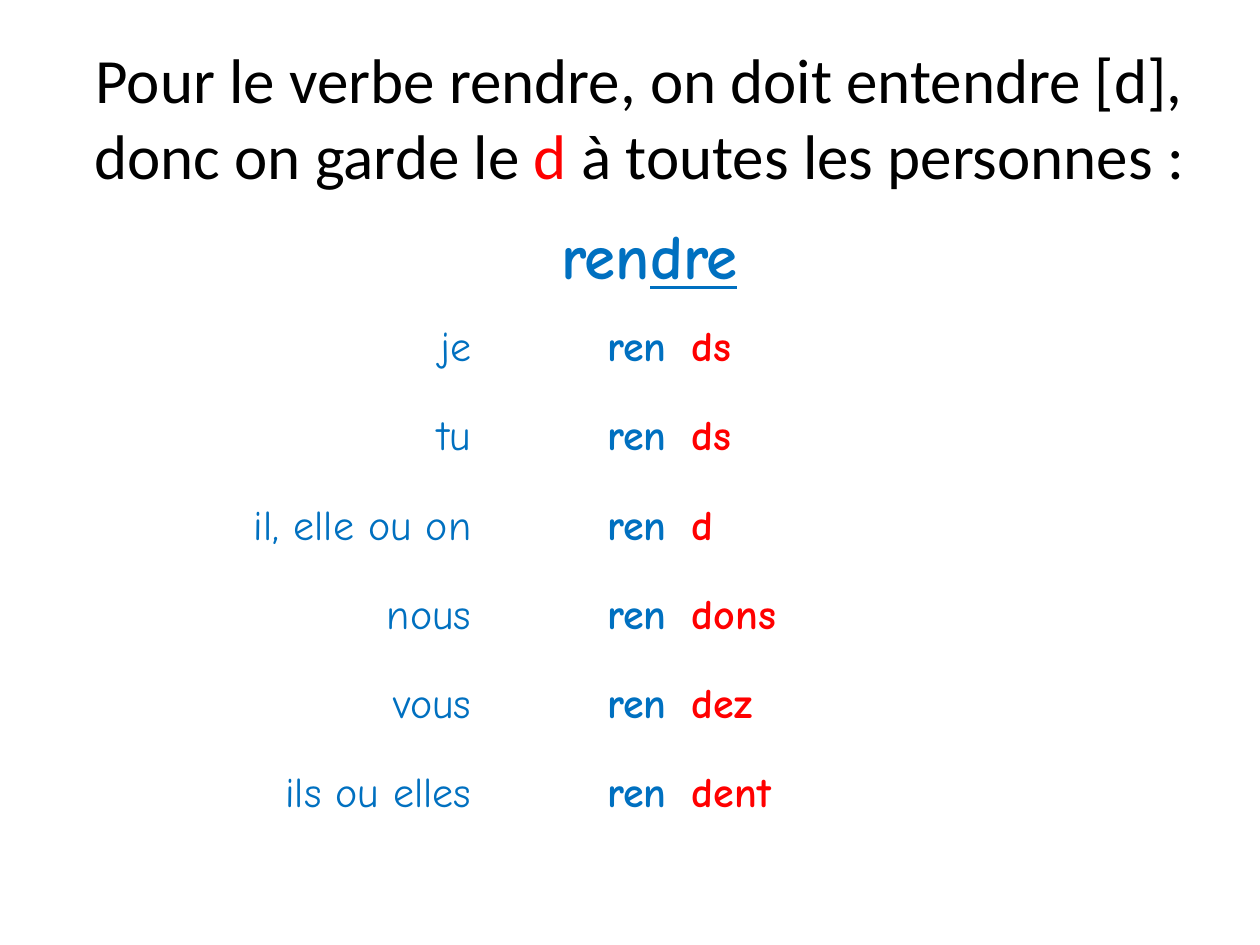
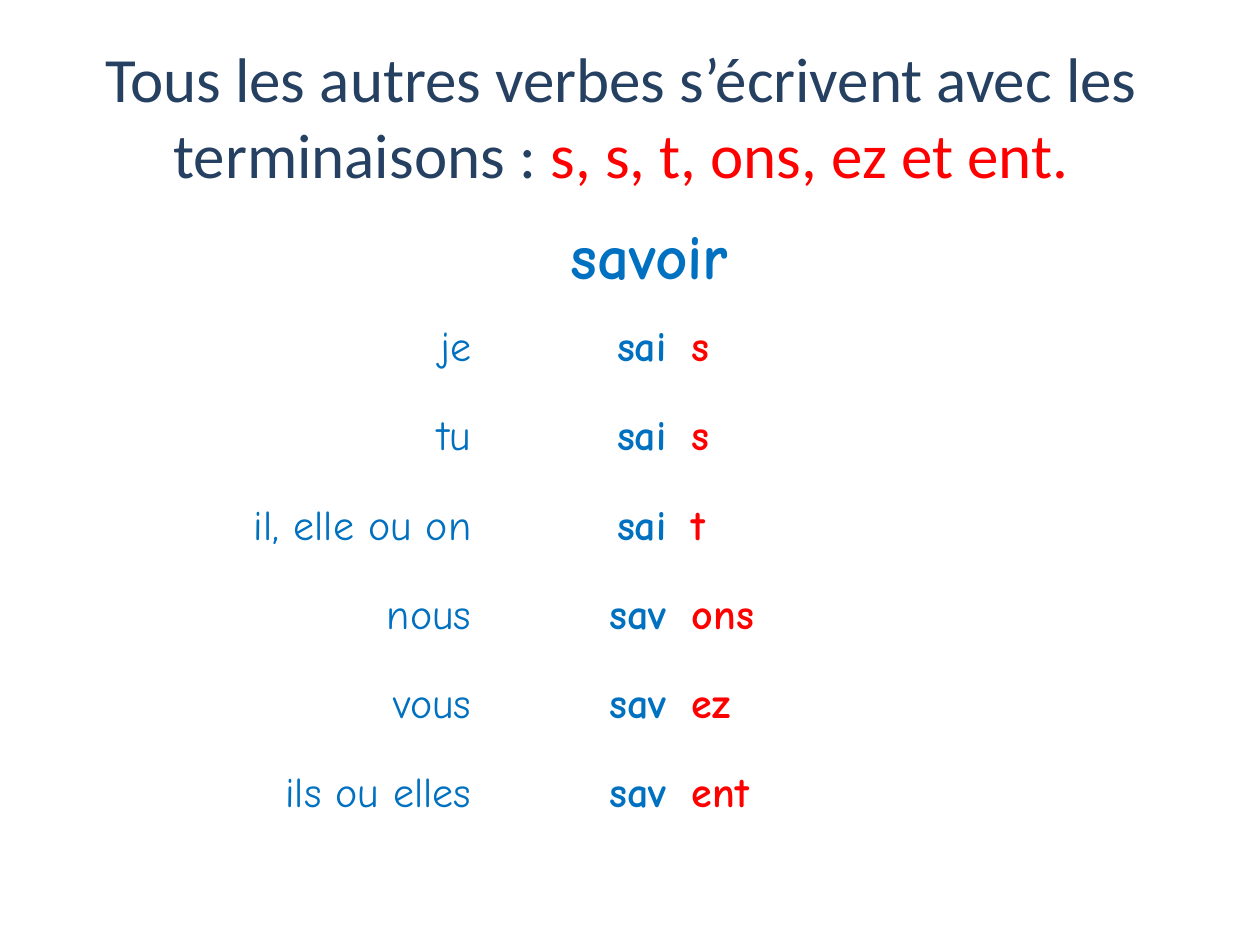
"""Build two slides on the endings of French verbs in the present tense."""
from dataclasses import dataclass

from pptx import Presentation
from pptx.dml.color import RGBColor
from pptx.enum.text import MSO_ANCHOR, PP_ALIGN
from pptx.slide import Slide
from pptx.text.text import TextFrame
from pptx.util import Pt

LEFT, CENTER, RIGHT = PP_ALIGN.LEFT, PP_ALIGN.CENTER, PP_ALIGN.RIGHT
MIDDLE = MSO_ANCHOR.MIDDLE


@dataclass(frozen=True)
class Theme:
    """Colours, fonts and type sizes shared by the slides."""
    black: RGBColor = RGBColor(0x00, 0x00, 0x00)
    navy: RGBColor = RGBColor(0x25, 0x40, 0x61)
    blue: RGBColor = RGBColor(0x00, 0x70, 0xC0)
    title_red: RGBColor = RGBColor(0xFE, 0x00, 0x00)
    ending_red: RGBColor = RGBColor(0xFF, 0x00, 0x00)
    white: RGBColor = RGBColor(0xFF, 0xFF, 0xFF)
    title_font: str = "Calibri"
    verb_font: str = "Comic Neue"
    heading_size: int = 36
    form_size: int = 24


THEME = Theme()
SLIDE_SIZE = (720, 540)
TITLE_HEIGHT = 90
TABLE_LEFT, TABLE_TOP = 87.84, 122.4
COLUMN_WIDTHS = (188.64, 111.6, 266.4)
ROW_HEIGHT = 51.02
PRONOUNS = ("je", "tu", "il, elle ou on", "nous", "vous", "ils ou elles")


@dataclass(frozen=True)
class Span:
    """A run of text with its look."""
    text: str
    color: RGBColor
    font: str = THEME.verb_font
    size: int = THEME.form_size
    bold: bool = False
    underline: bool = False


@dataclass(frozen=True)
class Lesson:
    """The rule, the infinitive and the forms taught on one slide."""
    rule: tuple[Span, ...]
    rule_box: tuple[float, float, float]
    infinitive: tuple[Span, ...]
    stems: tuple[str, ...]
    endings: tuple[str, ...]


def rule_span(text: str, color: RGBColor) -> Span:
    """Return a run in the title style."""
    return Span(text, color, THEME.title_font, THEME.heading_size)


def infinitive_span(text: str, underline: bool = False) -> Span:
    """Return a run in the style of the table heading."""
    return Span(text, THEME.blue, size=THEME.heading_size, bold=True, underline=underline)


LESSONS = (
    Lesson(
        rule=(
            rule_span("Pour le verbe rendre, on doit entendre [d], donc on garde le ", THEME.black),
            rule_span("d", THEME.title_red),
            rule_span(" à toutes les personnes :", THEME.black),
        ),
        rule_box=(36, 21.6, 658.8),
        infinitive=(infinitive_span("ren"), infinitive_span("dre", underline=True)),
        stems=("ren",) * 6,
        endings=("ds", "ds", "d", "dons", "dez", "dent"),
    ),
    Lesson(
        rule=(
            rule_span("Tous les autres verbes s’écrivent avec les terminaisons : ", THEME.navy),
            rule_span("s, s, t, ons, ez et ent.", THEME.title_red),
        ),
        rule_box=(30.96, 20.88, 648),
        infinitive=(infinitive_span("savoir"),),
        stems=("sai",) * 3 + ("sav",) * 3,
        endings=("s", "s", "t", "ons", "ez", "ent"),
    ),
)


def write(frame: TextFrame, spans: tuple[Span, ...], alignment: PP_ALIGN) -> None:
    """Write the runs into the first paragraph of a text frame."""
    paragraph = frame.paragraphs[0]
    paragraph.alignment = alignment
    for span in spans:
        run = paragraph.add_run()
        run.text = span.text
        run.font.name = span.font
        run.font.size = Pt(span.size)
        run.font.bold = span.bold
        run.font.underline = span.underline
        run.font.color.rgb = span.color


def add_rule(slide: Slide, lesson: Lesson) -> None:
    """Add the spelling rule as the title of the slide."""
    left, top, width = lesson.rule_box
    frame = slide.shapes.add_textbox(Pt(left), Pt(top), Pt(width), Pt(TITLE_HEIGHT)).text_frame
    frame.word_wrap = True
    frame.vertical_anchor = MIDDLE
    write(frame, lesson.rule, CENTER)


def add_conjugation(slide: Slide, lesson: Lesson) -> None:
    """Add the table of pronouns, stems and endings under the infinitive."""
    row_count = len(PRONOUNS) + 1
    conjugation = slide.shapes.add_table(
        row_count, len(COLUMN_WIDTHS), Pt(TABLE_LEFT), Pt(TABLE_TOP),
        Pt(sum(COLUMN_WIDTHS)), Pt(ROW_HEIGHT * row_count)).table
    conjugation.first_row = conjugation.horz_banding = False
    for column, width in zip(conjugation.columns, COLUMN_WIDTHS):
        column.width = Pt(width)
    for row in conjugation.rows:
        row.height = Pt(ROW_HEIGHT)
    for cell in conjugation.iter_cells():
        cell.fill.solid()
        cell.fill.fore_color.rgb = THEME.white
        cell.vertical_anchor = MIDDLE

    heading = conjugation.cell(0, 0)
    heading.merge(conjugation.cell(0, len(COLUMN_WIDTHS) - 1))
    write(heading.text_frame, lesson.infinitive, CENTER)
    forms = zip(PRONOUNS, lesson.stems, lesson.endings)
    for row_index, (pronoun, stem, ending) in enumerate(forms, start=1):
        parts = (
            (Span(pronoun, THEME.blue), RIGHT),
            (Span(stem, THEME.blue, bold=True), RIGHT),
            (Span(ending, THEME.ending_red, bold=True), LEFT),
        )
        for column_index, (span, alignment) in enumerate(parts):
            write(conjugation.cell(row_index, column_index).text_frame, (span,), alignment)


def main() -> None:
    """Build the presentation and save it."""
    presentation = Presentation()
    presentation.slide_width, presentation.slide_height = map(Pt, SLIDE_SIZE)
    blank = presentation.slide_layouts[6]
    for lesson in LESSONS:
        slide = presentation.slides.add_slide(blank)
        add_rule(slide, lesson)
        add_conjugation(slide, lesson)
    presentation.save("out.pptx")


if __name__ == "__main__":
    main()
